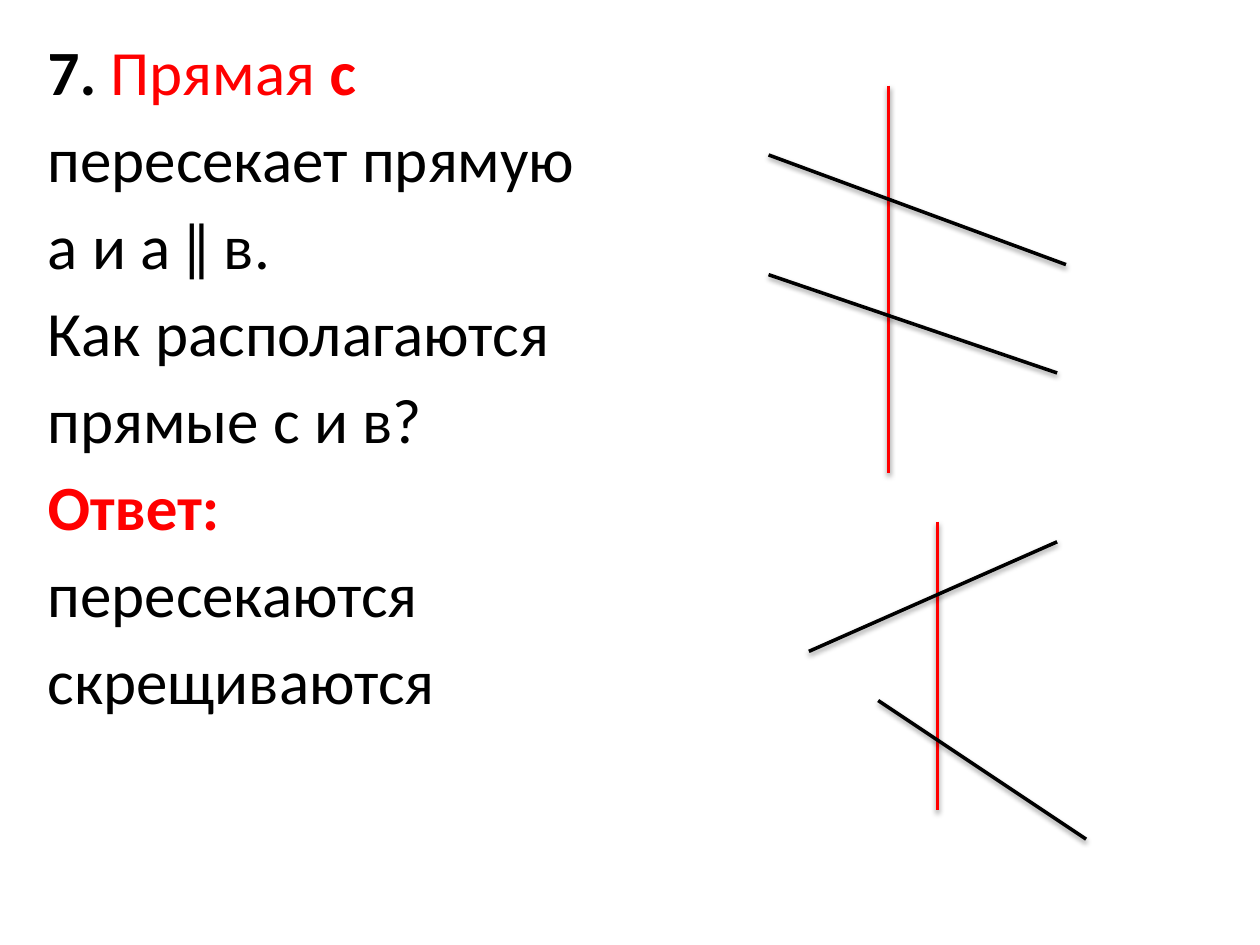
from dataclasses import dataclass

from lxml.etree import SubElement
from pptx import Presentation
from pptx.dml.color import RGBColor
from pptx.enum.shapes import MSO_CONNECTOR
from pptx.oxml.ns import qn
from pptx.util import Inches, Pt


@dataclass(frozen=True)
class Theme:
    font: str = "Calibri"
    black: str = "000000"
    red: str = "FF0000"
    text_size: float = 36
    space_before: float = 6.5
    hanging_indent: float = 0.38
    line_width: float = 2
    shadow_blur: float = 3.1
    shadow_distance: float = 1.6
    shadow_angle: int = 90
    shadow_opacity: int = 38


class SlideBuilder:
    def __init__(self, slide, theme):
        self.slide = slide
        self.theme = theme

    def text(self, left, top, width, height, paragraphs):
        shape = self.slide.shapes.add_textbox(
            Inches(left), Inches(top), Inches(width), Inches(height))
        frame = shape.text_frame
        frame.word_wrap = True
        indent = Inches(self.theme.hanging_indent)
        for index, runs in enumerate(paragraphs):
            paragraph = frame.paragraphs[0] if index == 0 else frame.add_paragraph()
            paragraph.space_before = Pt(self.theme.space_before)
            properties = paragraph._p.get_or_add_pPr()
            properties.set("marL", str(indent))
            properties.set("indent", str(-indent))
            for content, color, bold in runs:
                self.run(paragraph, content, color, bold)

    def run(self, paragraph, content, color, bold):
        run = paragraph.add_run()
        run.text = content
        run.font.name = self.theme.font
        run.font.size = Pt(self.theme.text_size)
        run.font.bold = bold
        run.font.color.rgb = RGBColor.from_string(color)

    def line(self, start, end, color):
        connector = self.slide.shapes.add_connector(
            MSO_CONNECTOR.STRAIGHT, *map(Inches, (*start, *end)))
        connector.line.color.rgb = RGBColor.from_string(color)
        connector.line.width = Pt(self.theme.line_width)
        self.shadow(connector)

    def shadow(self, connector):
        theme = self.theme
        effects = SubElement(connector._element.spPr, qn("a:effectLst"))
        shadow = SubElement(
            effects, qn("a:outerShdw"),
            blurRad=str(Pt(theme.shadow_blur)), dist=str(Pt(theme.shadow_distance)),
            dir=str(theme.shadow_angle * 60000), rotWithShape="0")
        color = SubElement(shadow, qn("a:srgbClr"), val=theme.black)
        SubElement(color, qn("a:alpha"), val=str(theme.shadow_opacity * 1000))


def main():
    presentation = Presentation()
    presentation.slide_width = Inches(10)
    presentation.slide_height = Inches(7.5)
    theme = Theme()
    slide = presentation.slides.add_slide(presentation.slide_layouts[6])
    builder = SlideBuilder(slide, theme)
    black, red = theme.black, theme.red

    # Question and answer
    builder.text(0.28, 0.21, 4.64, 6.49, [
        [("7.", black, True), (" Прямая ", red, False), ("с", red, True)],
        [("пересекает прямую", black, False)],
        [("а и а ǁ в.", black, False)],
        [("Как располагаются", black, False)],
        [("прямые с и в?", black, False)],
        [("Ответ:", red, True)],
        [("пересекаются", black, False)],
        [("скрещиваются", black, False)],
    ])

    # Parallel lines crossed by line c
    builder.line((7.05, 0.68), (7.05, 3.75), red)
    builder.line((6.1, 1.23), (8.46, 2.1), black)
    builder.line((6.1, 2.18), (8.39, 2.96), black)

    # Non-parallel lines crossed by line c
    builder.line((7.44, 4.14), (7.44, 6.43), red)
    builder.line((8.39, 4.3), (6.42, 5.17), black)
    builder.line((6.97, 5.56), (8.62, 6.66), black)

    presentation.save("out.pptx")


if __name__ == "__main__":
    main()
